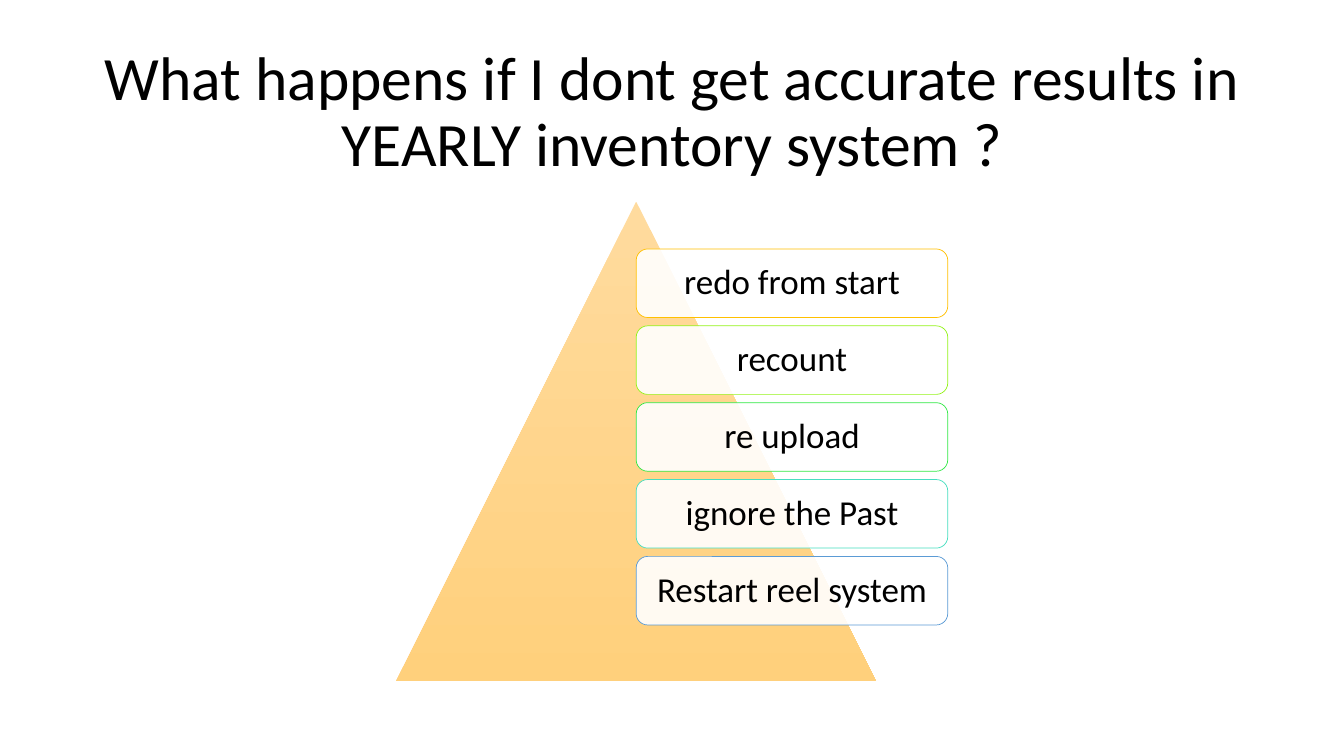
from pptx import Presentation
from pptx.dml.color import RGBColor
from pptx.enum.shapes import MSO_SHAPE as Shape
from pptx.enum.text import MSO_ANCHOR as Anchor, PP_ALIGN as Align
from pptx.oxml.ns import qn
from pptx.util import Inches, Pt
from lxml.etree import SubElement

STEPS = [
    ("redo from start", "FFC000"),
    ("recount", "94F319"),
    ("re upload", "30E845"),
    ("ignore the Past", "46DEBF"),
    ("Restart reel system", "5B9BD5"),
]
TOP, LAST = 2.47, 5.52
PITCH = (LAST - TOP) / (len(STEPS) - 1)


def paint(color, code):
    """Set a colour from a hex string."""
    color.rgb = RGBColor.from_string(code)


def write(shape, text, size):
    """Write one centred paragraph into a shape."""
    frame = shape.text_frame
    frame.text = text
    frame.word_wrap = True
    frame.vertical_anchor = Anchor.MIDDLE
    para = frame.paragraphs[0]
    para.alignment = Align.CENTER
    para.line_spacing = 0.9
    font = para.runs[0].font
    font.name = "Calibri"
    font.size = Pt(size)
    paint(font.color, "000000")


def add_title(slide, text):
    """Add the slide title."""
    box = slide.shapes.add_textbox(
        Inches(0.92), Inches(0.4), Inches(11.5), Inches(1.45))
    write(box, text, 44)


def add_peak(slide):
    """Add the shaded triangle behind the steps."""
    peak = slide.shapes.add_shape(
        Shape.ISOSCELES_TRIANGLE,
        Inches(3.93), Inches(2), Inches(4.76), Inches(4.76))
    peak.shadow.inherit = False
    peak.line.fill.background()
    peak.fill.gradient()
    peak.fill.gradient_angle = 270
    for stop, code in zip(peak.fill.gradient_stops, ("FFDB9E", "FFD07C")):
        paint(stop.color, code)


def add_step(slide, top, text, edge):
    """Add one translucent rounded step."""
    step = slide.shapes.add_shape(
        Shape.ROUNDED_RECTANGLE,
        Inches(6.31), Inches(top), Inches(3.09), Inches(0.68))
    step.shadow.inherit = False
    step.fill.solid()
    paint(step.fill.fore_color, "FFFFFF")
    white = step.fill._xPr.find(qn("a:solidFill"))[0]
    SubElement(white, qn("a:alpha")).set("val", "90000")
    paint(step.line.color, edge)
    step.line.width = Pt(0.5)
    frame = step.text_frame
    frame.margin_left = frame.margin_right = Inches(0.1)
    frame.margin_top = frame.margin_bottom = Inches(0.1)
    write(step, text, 25)


def main():
    """Build and save the slide."""
    deck = Presentation()
    deck.slide_width = Inches(13.33)
    deck.slide_height = Inches(7.5)
    slide = deck.slides.add_slide(deck.slide_layouts[6])
    add_title(slide, "What happens if I dont get accurate results in "
                     "YEARLY inventory system ?")
    add_peak(slide)
    for row, (text, edge) in enumerate(STEPS):
        add_step(slide, TOP + row * PITCH, text, edge)
    deck.save("out.pptx")


if __name__ == "__main__":
    main()
